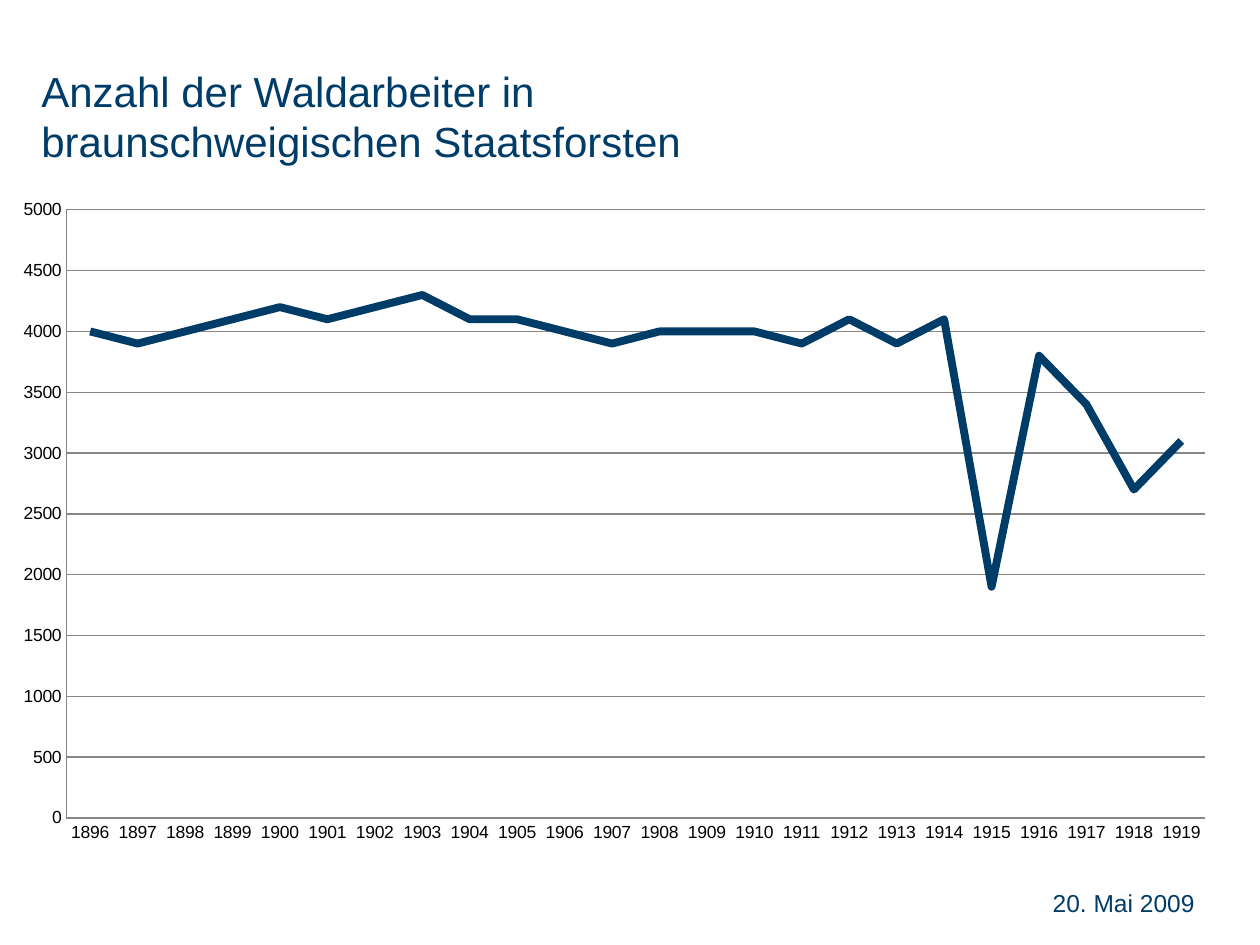
from lxml import etree
from pptx import Presentation
from pptx import util as u
from pptx.chart.data import CategoryChartData
from pptx.dml.color import RGBColor
from pptx.enum import chart as ch, text

# Content
TITLE = "Anzahl der Waldarbeiter in \vbraunschweigischen Staatsforsten"
DATE = "20. Mai 2009"
FIRST_YEAR = 1896
WORKERS = [4000, 3900, 4000, 4100, 4200, 4100, 4200, 4300,
           4100, 4100, 4000, 3900, 4000, 4000, 4000, 3900,
           4100, 3900, 4100, 1900, 3800, 3400, 2700, 3100]

THEME = {
    "font": "Arial",
    "navy": RGBColor.from_string("003C68"),
    "black": RGBColor.from_string("000000"),
    "grid": RGBColor.from_string("878787"),
    "title": 24, "date": 14, "axis": 10,
}
# Plot area as fractions of the chart frame
PLOT = {"x": 0.054, "y": 0.035, "w": 0.925, "h": 0.909}


def style(font, size, color):
    for name, value in {"name": THEME["font"], "size": u.Pt(THEME[size]), "bold": False}.items():
        setattr(font, name, value)
    font.color.rgb = THEME[color]


def add_text(s, content, box, size, align):
    tf = s.shapes.add_textbox(*map(u.Inches, box)).text_frame
    for name, value in {"word_wrap": True, "vertical_anchor": text.MSO_ANCHOR.TOP}.items():
        setattr(tf, name, value)
    p = tf.paragraphs[0]
    p.text = content
    p.alignment = align
    for r in p.runs:
        style(r.font, size, "navy")


def set_line(line, color, width):
    line.color.rgb = THEME[color]
    line.width = u.Pt(width)


def set_plot_layout(chart):
    plot_area = chart.plots[0]._element.getparent()
    ns = etree.QName(plot_area).namespace
    for old in plot_area.findall(f"{{{ns}}}layout"):
        plot_area.remove(old)
    layout = etree.Element(f"{{{ns}}}layout")
    manual = etree.SubElement(layout, f"{{{ns}}}manualLayout")
    values = {"layoutTarget": "inner", "xMode": "edge", "yMode": "edge", **PLOT}
    for tag, value in values.items():
        etree.SubElement(manual, f"{{{ns}}}{tag}").set("val", str(value))
    plot_area.insert(0, layout)


def add_line_chart(s, box):
    data = CategoryChartData()
    data.categories = [str(FIRST_YEAR + i) for i in range(len(WORKERS))]
    data.add_series("Series 1", WORKERS)
    chart = s.shapes.add_chart(ch.XL_CHART_TYPE.LINE_STACKED,
                               *map(u.Inches, box), data).chart
    chart.has_legend = chart.has_title = False
    style(chart.font, "axis", "black")
    chart.plots[0].vary_by_categories = False

    # Series
    series = chart.plots[0].series[0]
    series.smooth = False
    series.marker.style = ch.XL_MARKER_STYLE.NONE
    set_line(series.format.line, "navy", 4.5)

    # Axes and grid
    for axis in (chart.category_axis, chart.value_axis):
        axis.major_tick_mark = axis.minor_tick_mark = ch.XL_TICK_MARK.NONE
        set_line(axis.format.line, "grid", 0.75)
    limits = {"minimum_scale": 0, "maximum_scale": 5000, "major_unit": 500,
              "has_major_gridlines": True}
    for name, value in limits.items():
        setattr(chart.value_axis, name, value)
    set_line(chart.value_axis.major_gridlines.format.line, "grid", 0.75)
    set_plot_layout(chart)


def main():
    prs = Presentation()
    prs.slide_width, prs.slide_height = u.Inches(10), u.Inches(7.5)
    s = prs.slides.add_slide(prs.slide_layouts[6])
    add_text(s, TITLE, (0.23, 0.47, 8.5, 0.5), "title", text.PP_ALIGN.LEFT)
    add_text(s, DATE, (7.5, 7, 2.08, 0.5), "date", text.PP_ALIGN.RIGHT)
    add_line_chart(s, (0, 1.48, 9.77, 5.31))
    prs.save("out.pptx")


if __name__ == "__main__":
    main()
